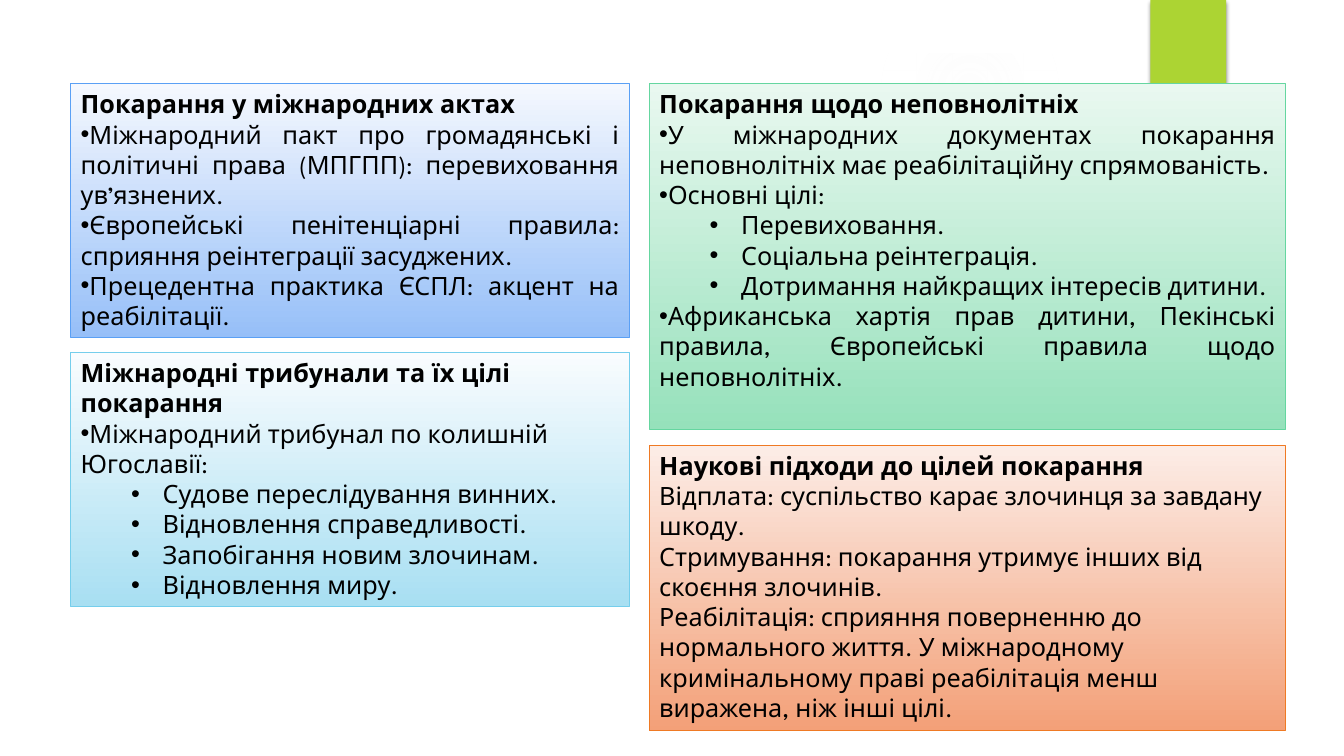
from lxml import etree
from pptx import Presentation
from pptx.dml.color import RGBColor
from pptx.enum import shapes, text
from pptx.oxml import ns
from pptx.util import Pt

BLACK = RGBColor(0x00, 0x00, 0x00)
WHITE = RGBColor(0xFF, 0xFF, 0xFF)
MIST = RGBColor(0xF7, 0xF7, 0xF7)
LIME = RGBColor(0xAC, 0xD4, 0x33)
BLUE = [RGBColor(0xF5, 0xF8, 0xFE), RGBColor(0x96, 0xBF, 0xF8), RGBColor(0x5A, 0xA0, 0xF5)]
CYAN = [RGBColor(0xF9, 0xFC, 0xFE), RGBColor(0xA8, 0xDF, 0xF2), RGBColor(0x75, 0xCE, 0xEC)]
GREEN = [RGBColor(0xE9, 0xF8, 0xF0), RGBColor(0x96, 0xE1, 0xBB), RGBColor(0x65, 0xD6, 0xA0)]
CORAL = [RGBColor(0xFC, 0xED, 0xE7), RGBColor(0xF3, 0xA0, 0x78), RGBColor(0xEF, 0x7A, 0x24)]

FONT = "League Spartan"
HEAD, PLAIN, ITEM, SUB = range(4)
LEFT = text.PP_ALIGN.LEFT
FULL = text.PP_ALIGN.JUSTIFY
RECT = shapes.MSO_SHAPE.RECTANGLE
OVAL = shapes.MSO_SHAPE.OVAL
FRAME = shapes.MSO_SHAPE.FRAME

HALOS = [
    (0, 210, 330, (11, 10), 75),
    (0, 228, 186, (8, 8), 72),
    (677.5, 132, 222, (7, 6), 69),
    (630, 0, 126, (14, 7), 73),
    (677.5, 462, 78, (14, 7), 66),
]
FOLD = [(672.5, 180), (754, 175), (842, 164), (928, 154), (923.8, 119.5),
        (865.5, 137.5), (807, 152), (750, 163.5), (697.5, 171.5), (669.6, 175)]
SHEET = [(36, 147), (36, 504), (924.5, 504), (924.5, 147), (844, 158.5), (763, 167),
         (683, 173.5), (605, 177), (528.5, 178.5), (455, 178), (385, 176.5),
         (320, 173.5), (231, 168), (155.5, 161), (97, 155), (57, 149.8)]

ACTS = [
    (HEAD, "Покарання у міжнародних актах"),
    (ITEM, "Міжнародний пакт про громадянські і політичні права (МПГПП): перевиховання ув’язнених."),
    (ITEM, "Європейські пенітенціарні правила: сприяння реінтеграції засуджених."),
    (ITEM, "Прецедентна практика ЄСПЛ: акцент на реабілітації."),
]
COURTS = [
    (HEAD, "Міжнародні трибунали та їх цілі покарання"),
    (ITEM, "Міжнародний трибунал по колишній Югославії:"),
    (SUB, "Судове переслідування винних."),
    (SUB, "Відновлення справедливості."),
    (SUB, "Запобігання новим злочинам."),
    (SUB, "Відновлення миру."),
]
MINORS = [
    (HEAD, "Покарання щодо неповнолітніх"),
    (ITEM, "У міжнародних документах покарання неповнолітніх має реабілітаційну спрямованість."),
    (ITEM, "Основні цілі:"),
    (SUB, "Перевиховання."),
    (SUB, "Соціальна реінтеграція."),
    (SUB, "Дотримання найкращих інтересів дитини."),
    (ITEM, "Африканська хартія прав дитини, Пекінські правила, Європейські правила щодо неповнолітніх."),
]
VIEWS = [
    (HEAD, "Наукові підходи до цілей покарання"),
    (PLAIN, "Відплата: суспільство карає злочинця за завдану шкоду."),
    (PLAIN, "Стримування: покарання утримує інших від скоєння злочинів."),
    (PLAIN, "Реабілітація: сприяння поверненню до нормального життя. "
            "У міжнародному кримінальному праві реабілітація менш виражена, ніж інші цілі."),
]


def add_node(root, tag, **attrs):
    """Append a drawing element and return it."""
    return etree.SubElement(root, ns.qn("a:" + tag), **attrs)


def add_tint(root, tone, alpha):
    """Append a colour with its opacity in percent."""
    add_node(add_node(root, "srgbClr", val=str(tone)), "alpha", val=str(alpha * 1000))


def add_form(slide, form, left, top, width, height):
    """Add a preset shape without a shadow."""
    shape = slide.shapes.add_shape(form, Pt(left), Pt(top), Pt(width), Pt(height))
    shape.shadow.inherit = False
    return shape


def paint(shape, tone):
    """Give a shape a plain fill and no line."""
    shape.fill.solid()
    shape.fill.fore_color.rgb = tone
    shape.line.fill.background()


def add_halo(slide, left, top, size, alphas, end):
    """Add a faint round glow that fades outwards."""
    halo = add_form(slide, OVAL, left, top, size, size)
    paint(halo, MIST)
    props = halo.element.spPr
    fade = etree.Element(ns.qn("a:gradFill"), rotWithShape="1")
    stops = add_node(fade, "gsLst")
    for spot, alpha in zip((0, 36, end), (*alphas, 0)):
        add_tint(add_node(stops, "gs", pos=str(spot * 1000)), MIST, alpha)
    core = add_node(fade, "path", path="circle")
    add_node(core, "fillToRect", **dict.fromkeys("ltrb", "50000"))
    props.replace(props.find(ns.qn("a:solidFill")), fade)


def add_sheet(slide, points):
    """Add a white outline through the given points."""
    pen = slide.shapes.build_freeform(*points[0], scale=Pt(1))
    pen.add_line_segments(points[1:], close=True)
    sheet = pen.convert_to_shape()
    sheet.shadow.inherit = False
    paint(sheet, WHITE)
    return sheet


def add_back(slide):
    """Add the glows, the curved sheet and the white border."""
    for halo in HALOS:
        add_halo(slide, *halo)
    fold = add_sheet(slide, FOLD)
    fold.rotation = 350.2
    tint = fold.element.spPr.find(ns.qn("a:solidFill"))[0]
    add_node(tint, "alpha", val="20000")
    add_sheet(slide, SHEET)
    edge = add_form(slide, FRAME, 0, 0, 960, 540)
    edge.adjustments[0] = 0.07
    paint(edge, WHITE)


def add_tab(slide):
    """Add the lime tab with its soft shadow at the top edge."""
    tab = add_form(slide, RECT, 821.8, 0, 54, 90)
    paint(tab, LIME)
    glow = tab.element.spPr.find(ns.qn("a:effectLst"))
    cast = add_node(glow, "outerShdw", blurRad=str(Pt(3)), dist=str(Pt(2)),
                    dir="5400000", rotWithShape="0")
    add_tint(cast, BLACK, 45)


def add_dot(para, kind):
    """Give a paragraph its bullet, indented for a sub-item."""
    props = para._p.get_or_add_pPr()
    if kind == SUB:
        para.level = 1
        props.set("marL", str(Pt(58.5)))
        props.set("indent", str(Pt(-22.5)))
    add_node(props, "buFont", typeface="Arial")
    add_node(props, "buChar", char="•")


def add_panel(slide, place, tones, lines, align):
    """Add a gradient panel and fill it with lines of text."""
    panel = add_form(slide, RECT, *place)
    panel.fill.gradient()
    panel.fill.gradient_angle = 270
    for stop, tone, spot in zip(panel.fill.gradient_stops, tones, (0, 1)):
        stop.color.rgb = tone
        stop.position = spot
    panel.line.color.rgb = tones[2]
    panel.line.width = Pt(0.75)
    frame = panel.text_frame
    frame.word_wrap = True
    frame.vertical_anchor = text.MSO_ANCHOR.TOP
    for count, (kind, words) in enumerate(lines):
        para = frame.add_paragraph() if count else frame.paragraphs[0]
        para.alignment = align
        if kind in (ITEM, SUB):
            add_dot(para, kind)
        run = para.add_run()
        run.text = words
        run.font.name = FONT
        run.font.size = Pt(18)
        run.font.bold = kind == HEAD
        run.font.color.rgb = BLACK


def main():
    """Build the slide and save it."""
    deck = Presentation()
    deck.slide_width, deck.slide_height = Pt(960), Pt(540)
    slide = deck.slides.add_slide(deck.slide_layouts[6])
    add_back(slide)
    add_tab(slide)
    add_panel(slide, (50.6, 59.8, 398.9, 181.5), BLUE, ACTS, FULL)
    add_panel(slide, (50.6, 251.8, 398.9, 181.5), CYAN, COURTS, LEFT)
    add_panel(slide, (463.8, 59.8, 454.3, 247), GREEN, MINORS, FULL)
    add_panel(slide, (463.8, 318.1, 454.3, 203.8), CORAL, VIEWS, LEFT)
    deck.save("out.pptx")


if __name__ == "__main__":
    main()
